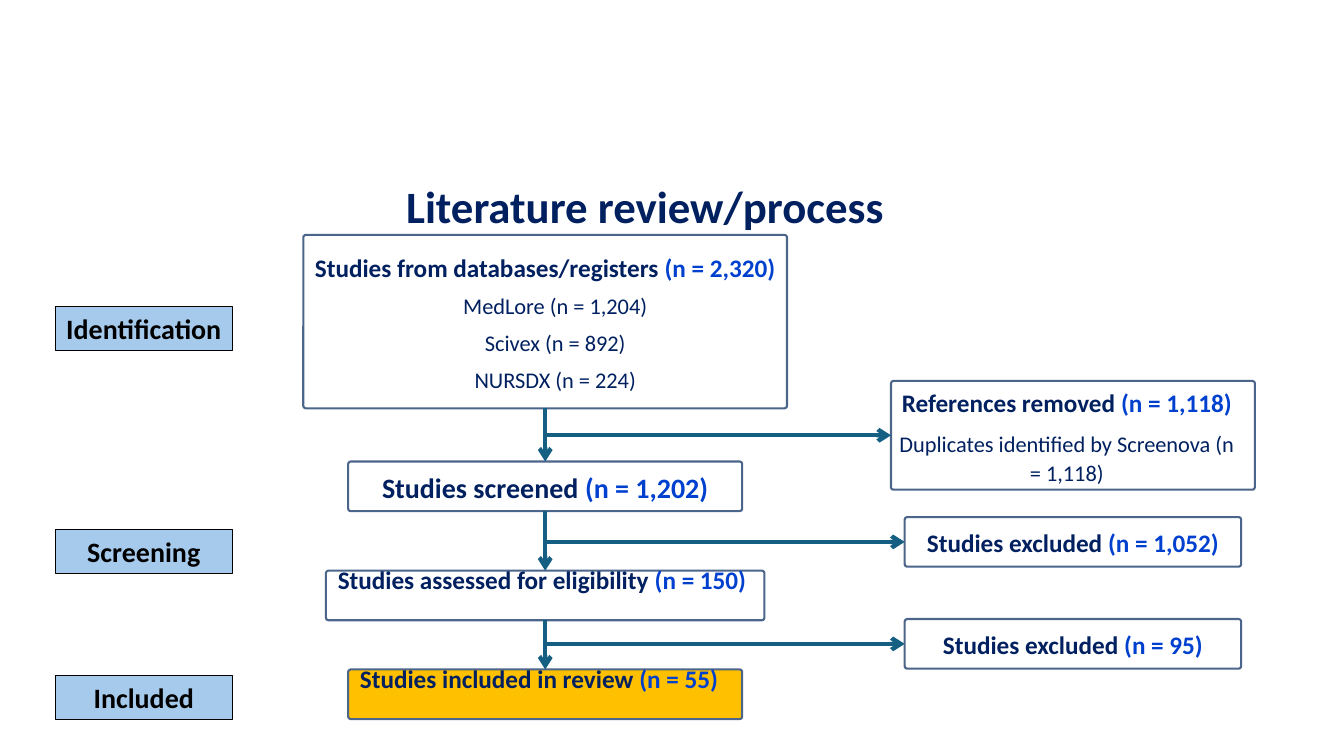
import pptx
import pptx.dml.color
import pptx.enum.shapes
import pptx.enum.text
import pptx.oxml.ns
import pptx.util
from lxml import etree

Cm = pptx.util.Cm
Pt = pptx.util.Pt
SHAPES = pptx.enum.shapes.MSO_SHAPE
ANCHOR = pptx.enum.text.MSO_ANCHOR
CENTER = pptx.enum.text.PP_ALIGN.CENTER

COLORS = {"navy": "002060", "count": "0040CF", "border": "4C658A", "white": "FFFFFF",
          "gold": "FFC000", "label": "A6CAEC", "black": "000000", "arrow": "156082"}

# Centimetres
MAIN_AXIS, SIDE_AXIS = 13.74, 27.04
STEP_HEIGHT = 1.25
CORNER_RADIUS = 0.065
LABEL_LEFT, LABEL_WIDTH, LABEL_HEIGHT = 1.4, 4.45, 1.12
MARGINS = {"margin_left": 0.12, "margin_right": 0.12, "margin_top": 0.13, "margin_bottom": 0.13}
LIFTED = {"margin_bottom": 1.0}

# Box: (top, width, height); content: (heading, count, size, details, space after)
MAIN_STEPS = [
    ((5.92, 12.19, 4.37), ("Studies from databases/registers ", "(n = 2,320)", 18,
     ["MedLore (n = 1,204)", "Scivex (n = 892)", "NURSDX (n = 224)"], 6),
     {"detail_indent": 0.51}),
    ((11.63, 9.93, STEP_HEIGHT), ("Studies screened ", "(n = 1,202)", 20, [], 8), {}),
    ((14.38, 11.05, STEP_HEIGHT), ("Studies assessed for eligibility ", "(n = 150)", 18, [], 8),
     {"margins": {**LIFTED, "margin_right": 0.28}}),
    ((16.87, 9.93, STEP_HEIGHT), ("Studies included in review ", "(n = 55)", 18, [], 8),
     {"margins": {**LIFTED, "margin_right": 0.43}, "fill": "gold"}),
]
SIDE_STEPS = [
    ((9.6, 9.17, 2.74), ("References removed ", "(n = 1,118)", 18,
     ["Duplicates identified by Screenova (n = 1,118)"], 8),
     {"margins": {"margin_right": 0.43}}),
    ((13.03, 8.48, STEP_HEIGHT), ("Studies excluded ", "(n = 1,052)", 18, [], 8), {}),
    ((15.6, 8.48, STEP_HEIGHT), ("Studies excluded ", "(n = 95)", 18, [], 8), {}),
]
PHASES = [("Identification", 7.72), ("Screening", 13.34), ("Included", 17.02)]


def rgb(name):
    return pptx.dml.color.RGBColor.from_string(COLORS[name])


def set_attributes(target, values):
    for name, value in values.items():
        setattr(target, name, value)


def add_run(paragraph, text, size, color, bold=True):
    run = paragraph.add_run()
    run.text = text
    set_attributes(run.font, {"name": "Calibri", "size": Pt(size), "bold": bold})
    run.font.color.rgb = rgb(color)


def add_box(slide, kind, box, fill, border, border_width, margins):
    shape = slide.shapes.add_shape(kind, *map(Cm, box))
    shape.shadow.inherit = False
    shape.fill.solid()
    shape.fill.fore_color.rgb = rgb(fill)
    shape.line.color.rgb = rgb(border)
    shape.line.width = Pt(border_width)
    set_attributes(shape.text_frame, {"word_wrap": True, "vertical_anchor": ANCHOR.MIDDLE})
    set_attributes(shape.text_frame,
                   {side: Cm(value) for side, value in {**MARGINS, **margins}.items()})
    return shape


def add_title(slide, box):
    title = slide.shapes.title
    set_attributes(title, dict(zip(("left", "top", "width", "height"), map(Cm, box))))
    set_attributes(title.text_frame, {"word_wrap": True, "vertical_anchor": ANCHOR.TOP,
                                      "auto_size": pptx.enum.text.MSO_AUTO_SIZE.NONE})
    paragraph = title.text_frame.paragraphs[0]
    set_attributes(paragraph, {"alignment": CENTER, "line_spacing": 1.1,
                               "space_before": Pt(0), "space_after": Pt(6)})
    add_run(paragraph, "Literature review/process", 32, "navy")


def add_phase(slide, text, box):
    shape = add_box(slide, SHAPES.RECTANGLE, box, "label", "black", 0.75, {})
    paragraph = shape.text_frame.paragraphs[0]
    paragraph.alignment = CENTER
    add_run(paragraph, text, 20, "black")


def add_step(slide, box, content, fill="white", margins={}, detail_indent=0):
    """Draw a study box: a bold heading with its count, then the detail lines."""
    heading, count, size, details, space_after = content
    shape = add_box(slide, SHAPES.ROUNDED_RECTANGLE, box, fill, "border", 1.5, margins)
    shape.adjustments[0] = CORNER_RADIUS / box[3]
    paragraph = shape.text_frame.paragraphs[0]
    add_run(paragraph, heading, size, "navy")
    add_run(paragraph, count, size, "count")
    for detail in details:
        paragraph = shape.text_frame.add_paragraph()
        add_run(paragraph, detail, 16, "navy", bold=False)
        if detail_indent:
            paragraph._p.get_or_add_pPr().set("indent", str(Cm(detail_indent)))
    for paragraph in shape.text_frame.paragraphs:
        set_attributes(paragraph, {"alignment": CENTER, "line_spacing": 1.07,
                                   "space_after": Pt(space_after)})


def add_arrow(slide, start, end):
    connector = slide.shapes.add_connector(pptx.enum.shapes.MSO_CONNECTOR.STRAIGHT,
                                           *map(Cm, start + end))
    connector.line.color.rgb = rgb("arrow")
    connector.line.width = Pt(3)
    qualified = pptx.oxml.ns.qn
    etree.SubElement(connector.line._get_or_add_ln(), qualified("a:tailEnd"), type="arrow")
    etree.SubElement(connector._element.spPr, qualified("a:effectLst"))


def add_column(slide, axis, steps):
    for (top, width, height), content, options in steps:
        add_step(slide, (axis - width / 2, top, width, height), content, **options)


def add_arrows(slide):
    for ((top, _, height), _, _), ((next_top, _, _), _, _) in zip(MAIN_STEPS, MAIN_STEPS[1:]):
        add_arrow(slide, (MAIN_AXIS, top + height), (MAIN_AXIS, next_top))
    for (top, width, height), _, _ in SIDE_STEPS:
        middle = top + height / 2
        add_arrow(slide, (MAIN_AXIS, middle), (SIDE_AXIS - width / 2, middle))


def main():
    presentation = pptx.Presentation()
    set_attributes(presentation, {"slide_width": Cm(33.87), "slide_height": Cm(19.05)})
    slide = presentation.slides.add_slide(presentation.slide_layouts.get_by_name("Title Only"))
    add_title(slide, (1.7, 4.24, 29.11, 1.73))
    add_column(slide, MAIN_AXIS, MAIN_STEPS)
    add_column(slide, SIDE_AXIS, SIDE_STEPS)
    for text, top in PHASES:
        add_phase(slide, text, (LABEL_LEFT, top, LABEL_WIDTH, LABEL_HEIGHT))
    add_arrows(slide)
    presentation.save("out.pptx")


if __name__ == "__main__":
    main()
